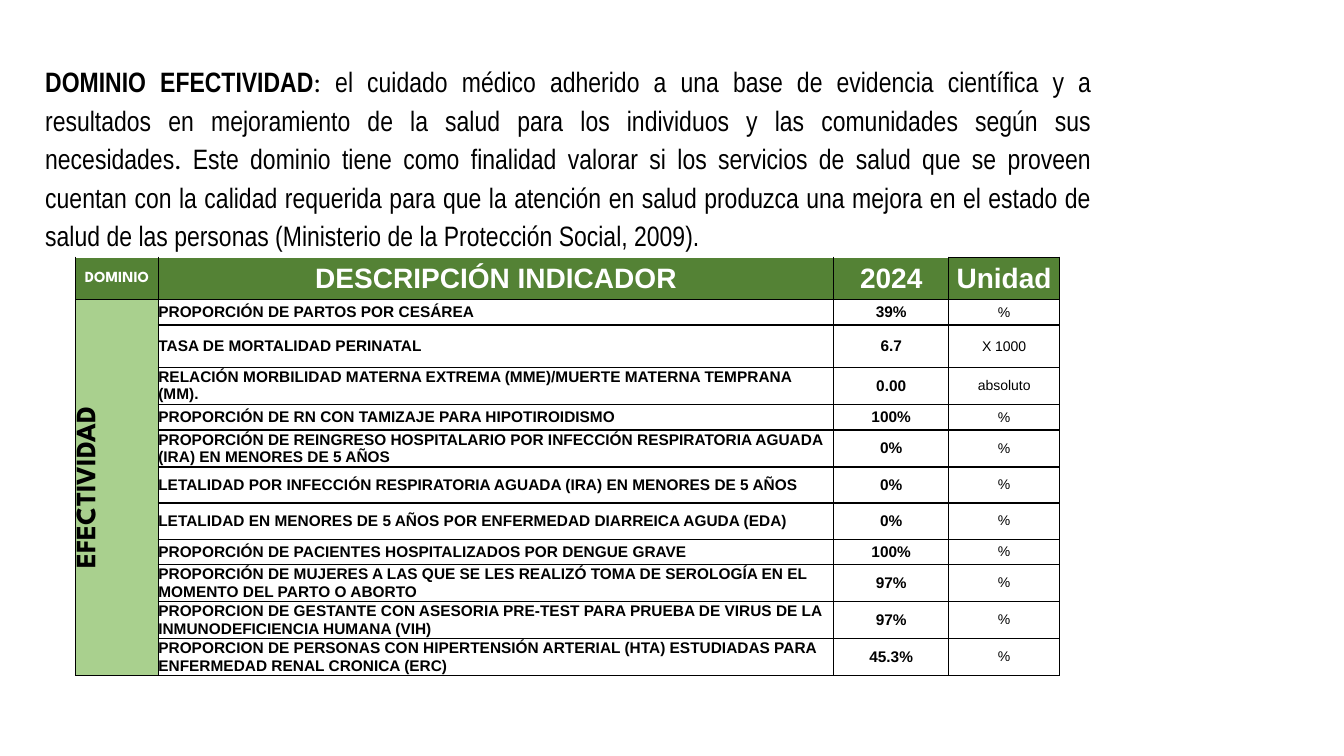
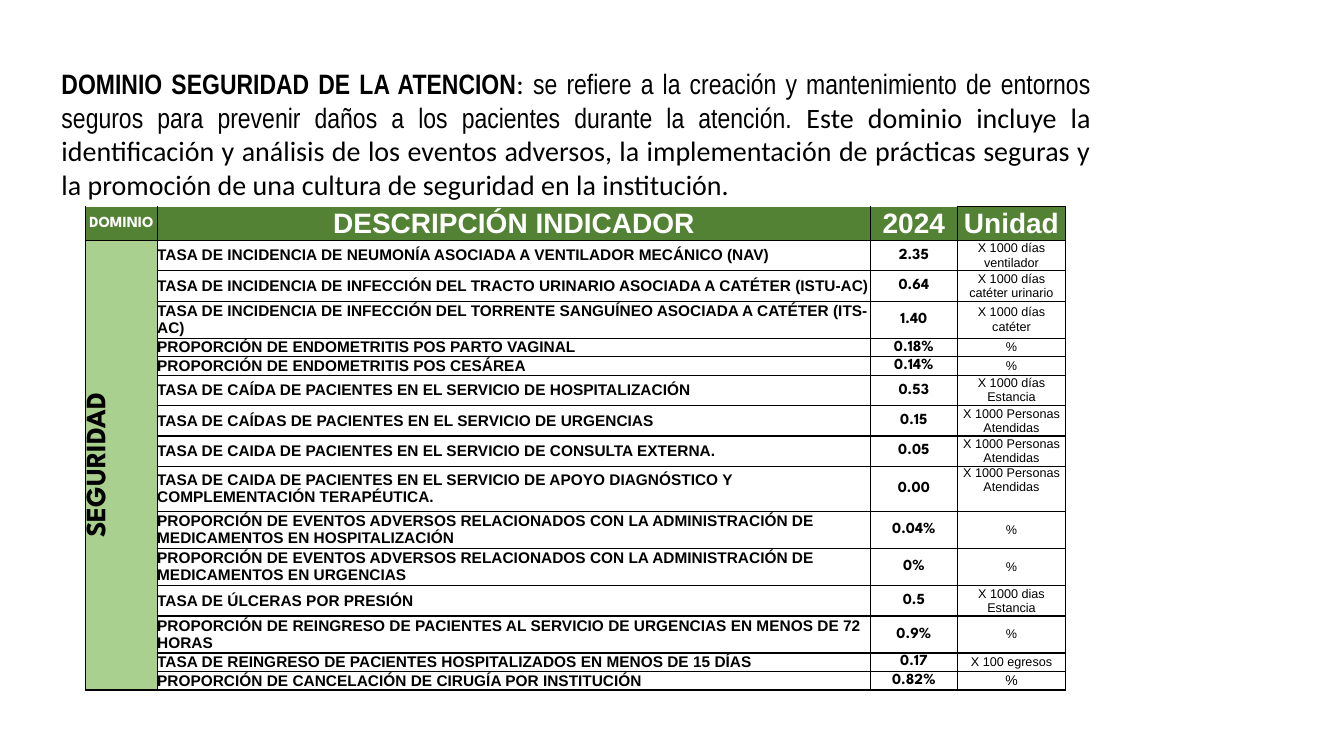
from lxml.etree import SubElement
from pptx import Presentation
from pptx.dml.color import RGBColor
from pptx.enum.text import MSO_ANCHOR, MSO_AUTO_SIZE, PP_ALIGN
from pptx.oxml.ns import qn
from pptx.util import Cm, Pt


def paint(code):
    """Turn a hex string into a colour."""
    return RGBColor.from_string(code)


class Deck:
    """Holds the shared style and the current slide."""

    BLACK, WHITE, DARK, LIGHT = "000000", "FFFFFF", "548235", "A9D08E"
    HEADS = ("DOMINIO", "DESCRIPCIÓN INDICADOR", "2024", "Unidad")
    BRAND = "League Spartan"
    HEAD = {"name": "Arial", "size": Pt(20), "bold": True}
    BODY = {"name": "Arial", "size": Pt(11), "bold": True}
    LEAD = {"name": "Arial Narrow", "size": Pt(20), "bold": False}

    def __init__(self):
        """Start an empty wide deck."""
        self.show = Presentation()
        self.show.slide_width, self.show.slide_height = Cm(33.87), Cm(19.05)
        self.slide = None

    def page(self):
        """Start a blank slide."""
        self.slide = self.show.slides.add_slide(self.show.slide_layouts[6])

    def run(self, para, text, form, tint=BLACK):
        """Add one run in the given format."""
        run = para.add_run()
        run.text = text
        for key, value in form.items():
            setattr(run.font, key, value)
        run.font.color.rgb = paint(tint)

    def intro(self, spot, parts, space):
        """Place the justified opening text."""
        box = self.slide.shapes.add_textbox(*map(Cm, spot))
        frame = box.text_frame
        frame.word_wrap = True
        frame.auto_size = MSO_AUTO_SIZE.SHAPE_TO_FIT_TEXT
        para = frame.paragraphs[0]
        para.alignment = PP_ALIGN.JUSTIFY
        para.line_spacing = space
        for text, more in parts:
            self.run(para, text, {**self.LEAD, **more})

    def edge(self, cell, sides):
        """Draw thin black borders on the named sides."""
        props = cell._tc.get_or_add_tcPr()
        for side in sides:
            line = SubElement(props, qn(f"a:ln{side}"), w=str(Pt(1)))
            fill = SubElement(line, qn("a:solidFill"))
            SubElement(fill, qn("a:srgbClr"), val=self.BLACK)

    def dress(self, cell, back, sides="LRTB"):
        """Give a cell its borders, fill and margins."""
        self.edge(cell, sides)
        cell.fill.solid()
        cell.fill.fore_color.rgb = paint(back)
        cell.vertical_anchor = MSO_ANCHOR.MIDDLE
        for side in ("left", "right", "top", "bottom"):
            setattr(cell, f"margin_{side}", 0)

    def label(self, cell, text, form, tint=BLACK, align=PP_ALIGN.CENTER):
        """Set the text of a cell."""
        para = cell.text_frame.paragraphs[0]
        para.alignment = align
        self.run(para, text, form, tint)

    def grid(self, spot, cols, top, name, rows, looks):
        """Build the indicator table of one domain."""
        tall = top + sum(row[0] for row in rows)
        size = [Cm(sum(cols)), Cm(tall)]
        table = self.slide.shapes.add_table(
            len(rows) + 1, len(cols), *map(Cm, spot), *size).table
        table.horz_banding = False
        for col, wide in zip(table.columns, cols):
            col.width = Cm(wide)
        for row, high in zip(table.rows, [top] + [row[0] for row in rows]):
            row.height = Cm(high)

        for col, text in enumerate(self.HEADS):
            cell = table.cell(0, col)
            self.dress(cell, self.DARK, "LRTB" if col == 3 else "LRB")
            form = self.HEAD if col else {**self.BODY, "name": self.BRAND}
            self.label(cell, text, form, self.WHITE)

        forms = [{**self.BODY, **look} for look in ({}, *looks)]
        for at, (_, *texts) in enumerate(rows, 1):
            self.dress(table.cell(at, 0), self.LIGHT)
            for col, text in enumerate(texts, 1):
                cell = table.cell(at, col)
                self.dress(cell, self.WHITE)
                align = PP_ALIGN.LEFT if col == 1 else PP_ALIGN.CENTER
                self.label(cell, text, forms[col - 1], align=align)

        side = table.cell(1, 0)
        side.merge(table.cell(len(rows), 0))
        side._tc.get_or_add_tcPr().set("vert", "vert270")
        self.label(side, name, {**self.HEAD, "name": self.BRAND})
        return table


CARE = [
    (0.64, "PROPORCIÓN DE PARTOS POR CESÁREA", "39%", "%"),
    (1.07, "TASA DE MORTALIDAD PERINATAL", "6.7", "X 1000"),
    (0.91, "RELACIÓN MORBILIDAD MATERNA EXTREMA (MME)/MUERTE MATERNA TEMPRANA (MM).", "0.00", "absoluto"),
    (0.64, "PROPORCIÓN DE RN CON TAMIZAJE PARA HIPOTIROIDISMO", "100%", "%"),
    (0.91, "PROPORCIÓN DE REINGRESO HOSPITALARIO POR INFECCIÓN RESPIRATORIA AGUADA (IRA) EN MENORES DE 5 AÑOS", "0%", "%"),
    (0.91, "LETALIDAD POR INFECCIÓN RESPIRATORIA AGUADA (IRA) EN MENORES DE 5 AÑOS", "0%", "%"),
    (0.91, "LETALIDAD EN MENORES DE 5 AÑOS POR ENFERMEDAD DIARREICA AGUDA (EDA)", "0%", "%"),
    (0.64, "PROPORCIÓN DE PACIENTES HOSPITALIZADOS POR DENGUE GRAVE", "100%", "%"),
    (0.91, "PROPORCIÓN DE MUJERES A LAS QUE SE LES REALIZÓ TOMA DE SEROLOGÍA EN EL MOMENTO DEL PARTO O ABORTO", "97%", "%"),
    (0.91, "PROPORCION DE GESTANTE CON ASESORIA PRE-TEST PARA PRUEBA DE VIRUS DE LA INMUNODEFICIENCIA HUMANA (VIH)", "97%", "%"),
    (0.91, "PROPORCION DE PERSONAS CON HIPERTENSIÓN ARTERIAL (HTA) ESTUDIADAS PARA ENFERMEDAD RENAL CRONICA (ERC)", "45.3%", "%"),
]
SAFE = [
    (0.76, "TASA DE INCIDENCIA DE NEUMONÍA ASOCIADA A VENTILADOR MECÁNICO (NAV)", "2.35", "X 1000 días ventilador"),
    (0.76, "TASA DE INCIDENCIA DE INFECCIÓN DEL TRACTO URINARIO ASOCIADA A CATÉTER (ISTU-AC)", "0.64", "X 1000 días catéter urinario"),
    (0.84, "TASA DE INCIDENCIA DE INFECCIÓN DEL TORRENTE SANGUÍNEO ASOCIADA A CATÉTER (ITS- AC)", "1.40", "X 1000 días catéter"),
    (0.41, "PROPORCIÓN DE ENDOMETRITIS POS PARTO VAGINAL", "0.18%", "%"),
    (0.41, "PROPORCIÓN DE ENDOMETRITIS POS CESÁREA", "0.14%", "%"),
    (0.76, "TASA DE CAÍDA DE PACIENTES EN EL SERVICIO DE HOSPITALIZACIÓN", "0.53", "X 1000 días Estancia"),
    (0.76, "TASA DE CAÍDAS DE PACIENTES EN EL SERVICIO DE URGENCIAS", "0.15", "X 1000 Personas Atendidas"),
    (0.76, "TASA DE CAIDA DE PACIENTES EN EL SERVICIO DE CONSULTA EXTERNA.", "0.05", "X 1000 Personas Atendidas"),
    (1.14, "TASA DE CAIDA DE PACIENTES EN EL SERVICIO DE APOYO DIAGNÓSTICO Y COMPLEMENTACIÓN TERAPÉUTICA.", "0.00", "X 1000 Personas Atendidas"),
    (0.84, "PROPORCIÓN DE EVENTOS ADVERSOS RELACIONADOS CON LA ADMINISTRACIÓN DE MEDICAMENTOS EN HOSPITALIZACIÓN", "0.04%", "%"),
    (0.84, "PROPORCIÓN DE EVENTOS ADVERSOS RELACIONADOS CON LA ADMINISTRACIÓN DE MEDICAMENTOS EN URGENCIAS", "0%", "%"),
    (0.76, "TASA DE ÚLCERAS POR PRESIÓN", "0.5", "X 1000 dias Estancia"),
    (0.84, "PROPORCIÓN DE REINGRESO DE PACIENTES AL SERVICIO DE URGENCIAS EN MENOS DE 72 HORAS", "0.9%", "%"),
    (0.41, "TASA DE REINGRESO DE PACIENTES HOSPITALIZADOS EN MENOS DE 15 DÍAS", "0.17", "X 100 egresos"),
    (0.41, "PROPORCIÓN DE CANCELACIÓN DE CIRUGÍA POR INSTITUCIÓN", "0.82%", "%"),
]


def main():
    """Build both slides and save them."""
    deck = Deck()
    bold, plain = {"bold": True}, {"name": "Calibri"}

    deck.page()
    deck.intro((0.89, 1.37, 26.87, 5.11), [
        ("DOMINIO EFECTIVIDAD", bold),
        (": ", plain),
        ("el cuidado médico adherido a una base de evidencia científica y a resultados en mejoramiento "
         "de la salud para los individuos y las comunidades según sus necesidades", {}),
        (". ", plain),
        ("Este dominio tiene como finalidad valorar si los servicios de salud que se proveen cuentan con "
         "la calidad requerida para que la atención en salud produzca una mejora en el estado de salud "
         "de las personas (Ministerio de la Protección Social, 2009).", {}),
    ], 1.15)
    deck.grid((1.91, 6.48), (2.08, 17.02, 2.9, 2.79), 1.07, "EFECTIVIDAD", CARE,
              ({}, {"size": Pt(10), "bold": False}))

    deck.page()
    deck.intro((1.3, 1.55, 26.44, 3.68), [
        ("DOMINIO SEGURIDAD DE LA ATENCION", bold),
        (": ", plain),
        ("se refiere a la creación y mantenimiento de entornos seguros para prevenir daños a los "
         "pacientes durante la atención. ", {}),
        ("Este dominio incluye la identificación y análisis de los eventos adversos, la implementación "
         "de prácticas seguras y la promoción de una cultura de seguridad en la institución.", plain),
    ], 1.0)
    table = deck.grid((2.16, 5.21), (1.8, 17.98, 2.18, 2.74), 0.76, "SEGURIDAD", SAFE,
                      ({"name": deck.BRAND}, {"size": Pt(9), "bold": False}))
    table.cell(9, 3).vertical_anchor = MSO_ANCHOR.TOP
    last = table.cell(len(SAFE), 3).text_frame.paragraphs[0]
    last.runs[0].font.size = Pt(10)

    deck.show.save("out.pptx")


if __name__ == "__main__":
    main()
